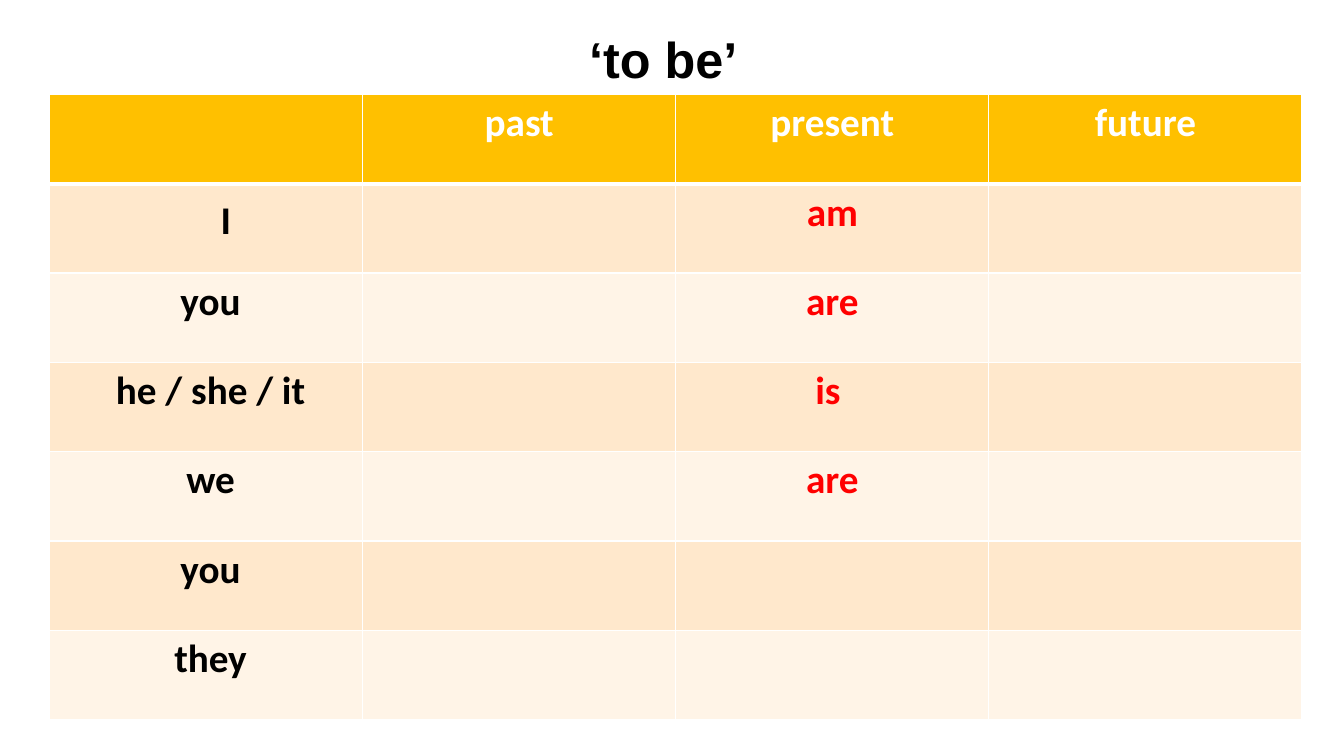
"""Build a slide with a table of the verb 'to be' in three tenses."""
import pptx
import pptx.dml.color
import pptx.enum.text
import pptx.oxml
import pptx.oxml.ns
import pptx.util
from pptx.util import Cm

TITLE = " ‘to be’"
ROWS = [
    ("", "past", "present", "future"),
    ("　I", "", "am", ""),
    (" you", "", "are", ""),
    (" he / she / it", "", "is ", ""),
    (" we", "", "are", ""),
    (" you", "", "", ""),
    (" they", "", "", ""),
]
HEADER_FILL = "FFC000"
BAND_FILLS = ("FFE8CC", "FFF4E7")
WHITE, BLACK, RED = "FFFFFF", "000000", "FF0000"
COLUMN_WIDTH, ROW_HEIGHT = Cm(7.89), Cm(2.25)


def color(code):
    return pptx.dml.color.RGBColor.from_string(code)


def format_text(para, font_name, size, code):
    para.alignment = pptx.enum.text.PP_ALIGN.CENTER
    para.font.name = font_name
    para.font.size = pptx.util.Pt(size)
    para.font.bold = True
    para.font.color.rgb = color(code)


def add_border(cell, side, points):
    cell._tc.get_or_add_tcPr().append(pptx.oxml.parse_xml(
        f'<a:ln{side} {pptx.oxml.ns.nsdecls("a")} w="{pptx.util.Pt(points)}">'
        f'<a:solidFill><a:srgbClr val="{WHITE}"/></a:solidFill></a:ln{side}>'))


def add_title(page):
    title = page.shapes.title
    title.left, title.top, title.width, title.height = Cm(9.86), Cm(0.58), Cm(13.36), Cm(1.8)
    frame = title.text_frame
    frame.text = TITLE
    frame.word_wrap = True
    frame.vertical_anchor = pptx.enum.text.MSO_ANCHOR.MIDDLE
    format_text(frame.paragraphs[0], "Arial", 36, BLACK)


def add_verb_table(page):
    columns = len(ROWS[0])
    table = page.shapes.add_table(len(ROWS), columns, Cm(1.25), Cm(2.38),
                                  COLUMN_WIDTH * columns, ROW_HEIGHT * len(ROWS)).table
    for column in table.columns:
        column.width = COLUMN_WIDTH
    for r, words in enumerate(ROWS):
        table.rows[r].height = ROW_HEIGHT
        fill = BAND_FILLS[(r - 1) % 2] if r else HEADER_FILL
        for c, word in enumerate(words):
            cell = table.cell(r, c)
            cell.text = word
            text_color = WHITE if r == 0 else BLACK if c == 0 else RED
            format_text(cell.text_frame.paragraphs[0], "Calibri", 28, text_color)
            for side in "LRTB":
                thick = (r, side) in ((0, "B"), (1, "T"))
                add_border(cell, side, 3 if thick else 1)
            cell.fill.solid()
            cell.fill.fore_color.rgb = color(fill)


def main():
    deck = pptx.Presentation()
    deck.slide_width, deck.slide_height = Cm(33.87), Cm(19.05)
    page = deck.slides.add_slide(deck.slide_layouts[5])
    add_title(page)
    add_verb_table(page)
    deck.save("out.pptx")


if __name__ == "__main__":
    main()
